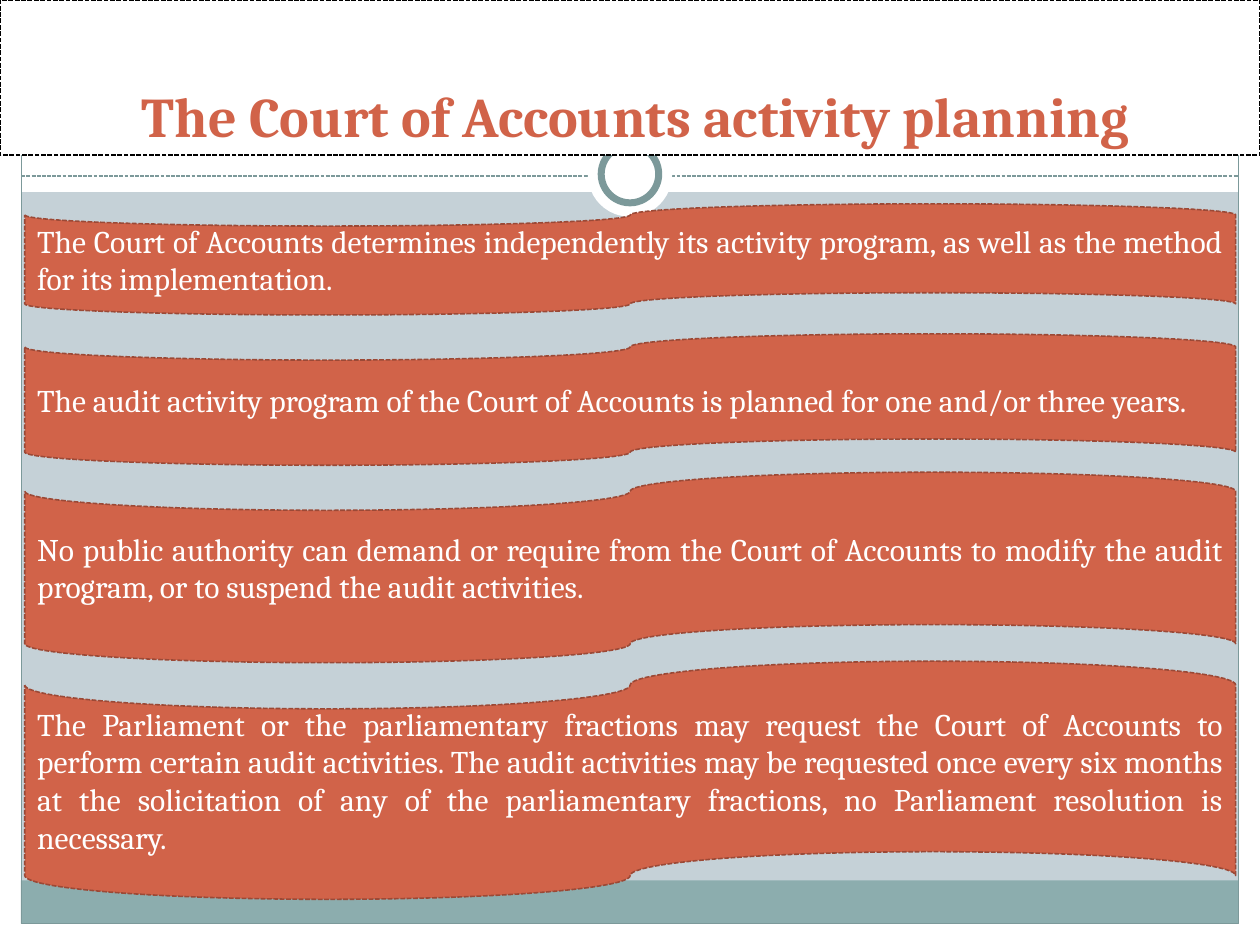
"""Build the slide on the activity planning of the Court of Accounts."""
from pptx import Presentation
from pptx import util as u
from pptx.dml.color import RGBColor
from pptx.enum import dml, shapes, text
from pptx.oxml.ns import qn
from lxml import etree

WHITE = RGBColor(0xFF, 0xFF, 0xFF)
BLACK = RGBColor(0x00, 0x00, 0x00)
MIST = RGBColor(0xC5, 0xD1, 0xD7)
TEAL = RGBColor(0x8C, 0xAD, 0xAE)
SLATE = RGBColor(0x7C, 0x99, 0x9A)
RUST = RGBColor(0xD1, 0x63, 0x49)
BROWN = RGBColor(0x9B, 0x49, 0x36)
KIND = shapes.MSO_SHAPE
DASH = dml.MSO_LINE.SQUARE_DOT


def add_block(kind, area, fill, line=None, width=0.75, dash=None):
    block = page.shapes.add_shape(kind, *[u.Cm(value) for value in area])
    block.shadow.inherit = False
    if fill is None:
        block.fill.background()
    else:
        block.fill.solid()
        block.fill.fore_color.rgb = fill
    if line is None:
        block.line.fill.background()
    else:
        block.line.color.rgb = line
        block.line.width = u.Pt(width)
        block.line.dash_style = dash
    return block


def write(block, wording, anchor, align, color, formats):
    frame = block.text_frame
    frame.word_wrap = True
    frame.vertical_anchor = anchor
    para = frame.paragraphs[0]
    para.alignment = align
    span = para.add_run()
    span.text = wording
    for name, value in formats.items():
        setattr(span.font, name, value)
    span.font.color.rgb = color


deck = Presentation()
deck.slide_width, deck.slide_height = u.Cm(25.4), u.Cm(19.05)
page = deck.slides.add_slide(deck.slide_layouts[6])
page.background.fill.solid()
page.background.fill.fore_color.rgb = MIST

for area, fill in [
    ((0, 18.62, 25.4, 0.43), WHITE),
    ((0, 0, 25.4, 3.87), WHITE),
    ((0, 0, 0.43, 19.05), WHITE),
    ((24.97, 0, 0.43, 19.05), WHITE),
    ((0.42, 17.75, 24.55, 0.87), TEAL),
]:
    add_block(KIND.RECTANGLE, area, fill)
add_block(KIND.RECTANGLE, (0.43, 0.43, 24.54, 18.19), None, SLATE)

rule = page.shapes.add_connector(
    shapes.MSO_CONNECTOR.STRAIGHT, u.Cm(0.43), u.Cm(3.55), u.Cm(24.97), u.Cm(3.55))
rule.line.color.rgb = SLATE
rule.line.width = u.Pt(0.75)
rule.line.dash_style = DASH
etree.SubElement(rule._element.spPr, qn("a:effectLst"))

add_block(KIND.OVAL, (11.85, 2.67, 1.7, 1.7), WHITE)
add_block(KIND.OVAL, (12.12, 2.93, 1.16, 1.16), WHITE, SLATE, 4)

title = add_block(KIND.RECTANGLE, (0, 0, 25.4, 3.13), WHITE, BLACK, 0.9, DASH)
title.text_frame.margin_left = u.Cm(0.48)
write(title, "The Court of Accounts activity planning",
      text.MSO_ANCHOR.BOTTOM, text.PP_ALIGN.CENTER, RUST,
      {"name": "Cambria", "size": u.Pt(32), "bold": True})

for top, height, wording in [
    (4.11, 2.24, "The Court of Accounts determines independently its activity program, "
                 "as well as the method for its implementation."),
    (6.73, 2.65, "The audit activity program of the Court of Accounts is planned "
                 "for one and/or three years."),
    (9.52, 3.84, "No public authority can demand or require from the Court of Accounts "
                 "to modify the audit program, or to suspend the audit activities."),
    (13.33, 4.8, "The Parliament or the parliamentary fractions may request the Court of "
                 "Accounts to perform certain audit activities. The audit activities may be "
                 "requested once every six months at the solicitation of any of the "
                 "parliamentary fractions, no Parliament resolution is necessary."),
]:
    tape = add_block(KIND.FLOWCHART_PUNCHED_TAPE, (0.5, top, 24.41, height),
                     RUST, BROWN, 0.9, DASH)
    write(tape, wording, text.MSO_ANCHOR.MIDDLE, text.PP_ALIGN.JUSTIFY, WHITE,
          {"name": "Cambria", "size": u.Pt(18)})

deck.save("out.pptx")
